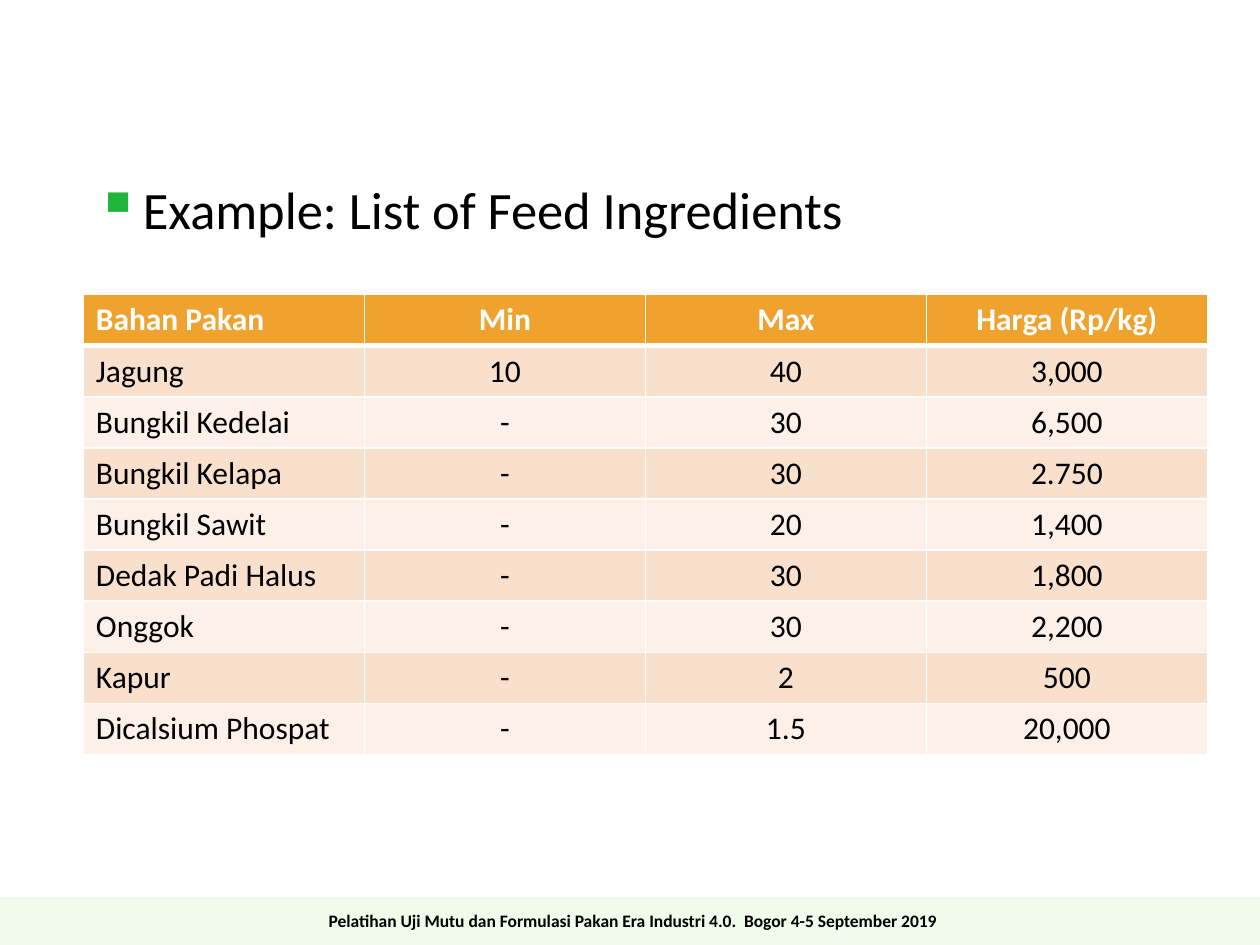
from lxml import etree
from pptx import Presentation
from pptx import util as u
from pptx.dml.color import RGBColor
from pptx.enum import shapes, text
from pptx.oxml import parse_xml
from pptx.oxml.ns import nsdecls, qn

COLORS = {
    "black": "000000",
    "white": "FFFFFF",
    "header": "F0A22E",
    "odd_row": "F9E0CD",
    "even_row": "FCF0E8",
    "bullet": "1EB53A",
    "footer": "CBF1B7",
}
FONT = "Calibri"
LEFT, WIDTH = u.Cm(1.68), u.Cm(22.66)
INGREDIENTS = [
    ("Bahan Pakan", "Min", "Max", "Harga (Rp/kg)"),
    ("Jagung", "10", "40", "3,000"),
    ("Bungkil Kedelai", "-", "30", "6,500"),
    ("Bungkil Kelapa", "-", "30", "2.750"),
    ("Bungkil Sawit", "-", "20", "1,400"),
    ("Dedak Padi Halus", "-", "30", "1,800"),
    ("Onggok", "-", "30", "2,200"),
    ("Kapur", "-", "2", "500"),
    ("Dicalsium Phospat", "-", "1.5", "20,000"),
]


def rgb(name):
    """Return the named colour."""
    return RGBColor.from_string(COLORS[name])


def write(frame, words, size=18, color="black", bold=False, align="LEFT"):
    """Fill the first paragraph of a text frame and return it."""
    paragraph = frame.paragraphs[0]
    paragraph.alignment = getattr(text.PP_ALIGN, align)
    run = paragraph.add_run()
    run.text = words
    run.font.name = FONT
    run.font.size = u.Pt(size)
    run.font.bold = bold
    run.font.color.rgb = rgb(color)
    return paragraph


def add_bullet(paragraph, char, indent):
    """Give a paragraph a coloured hanging bullet."""
    properties = paragraph._p.get_or_add_pPr()
    properties.set("marL", str(indent))
    properties.set("indent", str(-indent))
    for xml in (
        f'<a:buClr {nsdecls("a")}><a:srgbClr val="{COLORS["bullet"]}"/></a:buClr>',
        f'<a:buSzPct {nsdecls("a")} val="115000"/>',
        f'<a:buChar {nsdecls("a")} char="{char}"/>',
    ):
        properties.append(parse_xml(xml))


def add_borders(cell, bottom):
    """Draw white borders round a cell, with its own bottom width in points."""
    properties = cell._tc.get_or_add_tcPr()
    for side, width in (("L", 1), ("R", 1), ("T", 1), ("B", bottom)):
        properties.append(parse_xml(
            f'<a:ln{side} {nsdecls("a")} w="{u.Pt(width)}"><a:solidFill>'
            f'<a:srgbClr val="{COLORS["white"]}"/></a:solidFill></a:ln{side}>'))


def add_footer(slide, words):
    """Add the pale band with the event name."""
    band = slide.shapes.add_shape(shapes.MSO_SHAPE.RECTANGLE, u.Cm(-0.03),
                                  u.Cm(18.08), u.Cm(25.43), u.Cm(1.02))
    band.shadow.inherit = False
    band.line.fill.background()
    band.fill.solid()
    band.fill.fore_color.rgb = rgb("footer")
    tint = next(band.fill._xPr.iter(qn("a:srgbClr")))
    etree.SubElement(tint, qn("a:alpha")).set("val", "27000")
    band.text_frame.vertical_anchor = text.MSO_ANCHOR.MIDDLE
    paragraph = write(band.text_frame, words, size=10, bold=True, align="CENTER")
    paragraph.line_spacing = 0.9
    paragraph._p.get_or_add_pPr().set("marL", str(u.Cm(0.13)))


def add_ingredients(slide, rows):
    """Add the ingredient table with a header and banded rows."""
    row_height = u.Cm(1.03)
    table = slide.shapes.add_table(len(rows), len(rows[0]), LEFT, u.Cm(5.94),
                                   WIDTH, row_height * len(rows)).table
    for r, row in enumerate(rows):
        header = r == 0
        band = "header" if header else "odd_row" if r % 2 else "even_row"
        for c, words in enumerate(row):
            cell = table.cell(r, c)
            add_borders(cell, bottom=3 if header else 1)
            cell.fill.solid()
            cell.fill.fore_color.rgb = rgb(band)
            write(cell.text_frame, words, bold=header,
                  color="white" if header else "black",
                  align="CENTER" if c else "LEFT")


def add_heading(slide, words):
    """Add the bulleted heading in the body area."""
    body = slide.shapes.add_textbox(LEFT, u.Cm(3.45), WIDTH, u.Cm(13.67))
    body.text_frame.word_wrap = True
    paragraph = write(body.text_frame, words, size=30)
    paragraph.space_before = u.Pt(3)
    add_bullet(paragraph, "▪", u.Cm(0.95))


def main():
    """Build and save the slide."""
    deck = Presentation()
    deck.slide_width, deck.slide_height = u.Cm(25.4), u.Cm(19.05)
    slide = deck.slides.add_slide(deck.slide_layouts[6])
    add_footer(slide, "Pelatihan Uji Mutu dan Formulasi Pakan Era Industri 4.0.  "
                      "Bogor 4-5 September 2019")
    add_ingredients(slide, INGREDIENTS)
    add_heading(slide, "Example: List of Feed Ingredients")
    deck.save("out.pptx")


if __name__ == "__main__":
    main()
